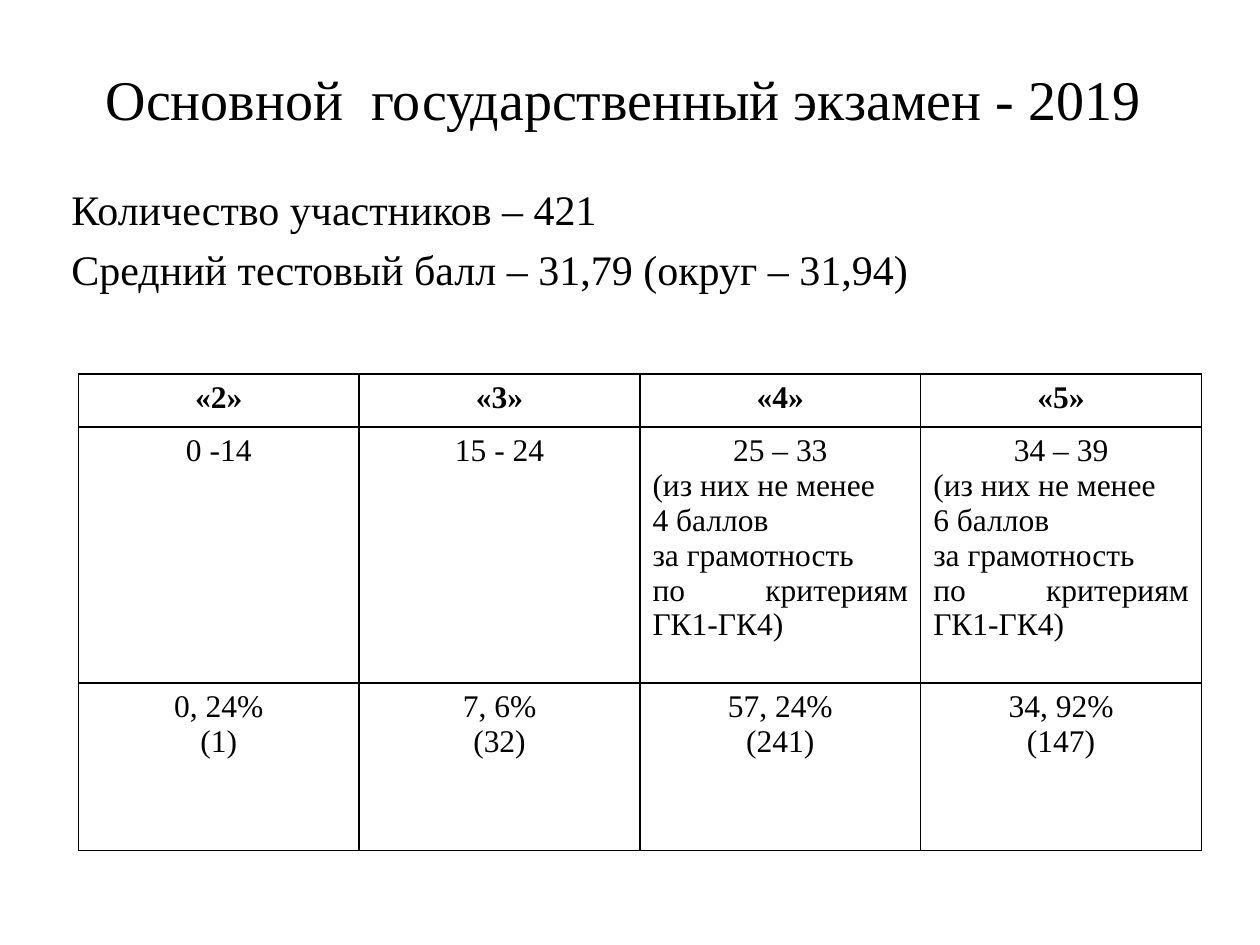
from lxml.etree import SubElement
from pptx import Presentation
from pptx.dml.color import RGBColor
from pptx.enum.text import MSO_ANCHOR as Anchor, PP_ALIGN as Align
from pptx.oxml.ns import qn
from pptx.util import Cm, Pt

FONT = "Times New Roman"
BLACK = "000000"

TITLE = "Основной  государственный экзамен - 2019"
SUMMARY = [
    "Количество участников – 421",
    "Средний тестовый балл – 31,79 (округ – 31,94)",
]


def literacy_note(points):
    return ["(из них не менее", f"{points} баллов", "за грамотность",
            "по критериям ГК1-ГК4)"]


# Each cell is a list of paragraphs
GRADES = [
    [["«2»"], ["«3»"], ["«4»"], ["«5»"]],
    [["0 -14"], ["15 - 24"],
     ["25 – 33", *literacy_note(4)], ["34 – 39", *literacy_note(6)]],
    [["0, 24%", "(1)"], ["7, 6%", "(32)"],
     ["57, 24%", "(241)"], ["34, 92%", "(147)"]],
]
ROW_HEIGHTS = [1.07, 5.16, 3.38]


def color(value):
    return RGBColor.from_string(value)


def write(frame, lines, size, aligns, bold=False, before=0):
    frame.word_wrap = True
    frame.text = "\n".join(lines)
    for para, align in zip(frame.paragraphs, aligns):
        para.alignment = align
        para.space_before = Pt(before)
        for span in para.runs:
            span.font.name = FONT
            span.font.size = Pt(size)
            span.font.bold = bold
            span.font.color.rgb = color(BLACK)


def add_title(page, left, top, width, height):
    box = page.shapes.add_textbox(Cm(left), Cm(top), Cm(width), Cm(height))
    write(box.text_frame, [TITLE], 32, [Align.CENTER])
    box.text_frame.vertical_anchor = Anchor.MIDDLE


def add_summary(page, left, top, width, height):
    box = page.shapes.add_textbox(Cm(left), Cm(top), Cm(width), Cm(height))
    write(box.text_frame, SUMMARY, 24, [Align.JUSTIFY] * len(SUMMARY), before=5.5)


def add_borders(cell):
    properties = cell._tc.get_or_add_tcPr()
    for side in ("lnL", "lnR", "lnT", "lnB"):
        line = SubElement(properties, qn(f"a:{side}"), w=str(Pt(1)))
        fill = SubElement(line, qn("a:solidFill"))
        SubElement(fill, qn("a:srgbClr"), val=BLACK)


def add_grades(page, left, top, width):
    columns = len(GRADES[0])
    frame = page.shapes.add_table(len(GRADES), columns, Cm(left), Cm(top),
                                  Cm(width), Cm(sum(ROW_HEIGHTS)))
    table = frame.table
    for column in table.columns:
        column.width = Cm(width / columns)
    for index, row in enumerate(GRADES):
        table.rows[index].height = Cm(ROW_HEIGHTS[index])
        # Score ranges carry a justified note below the centred first line
        rest = Align.JUSTIFY if index == 1 else Align.CENTER
        for position, lines in enumerate(row):
            cell = table.cell(index, position)
            aligns = [Align.CENTER] + [rest] * (len(lines) - 1)
            write(cell.text_frame, lines, 18, aligns, bold=index == 0)
            add_borders(cell)
            cell.fill.background()


def main():
    deck = Presentation()
    deck.slide_width, deck.slide_height = Cm(25.4), Cm(19.05)
    page = deck.slides.add_slide(deck.slide_layouts[6])
    add_title(page, 1.78, 0.79, 21.59, 2.39)
    add_summary(page, 1.19, 3.58, 23.22, 14.1)
    add_grades(page, 1.58, 7.54, 22.64)
    deck.save("out.pptx")


if __name__ == "__main__":
    main()
